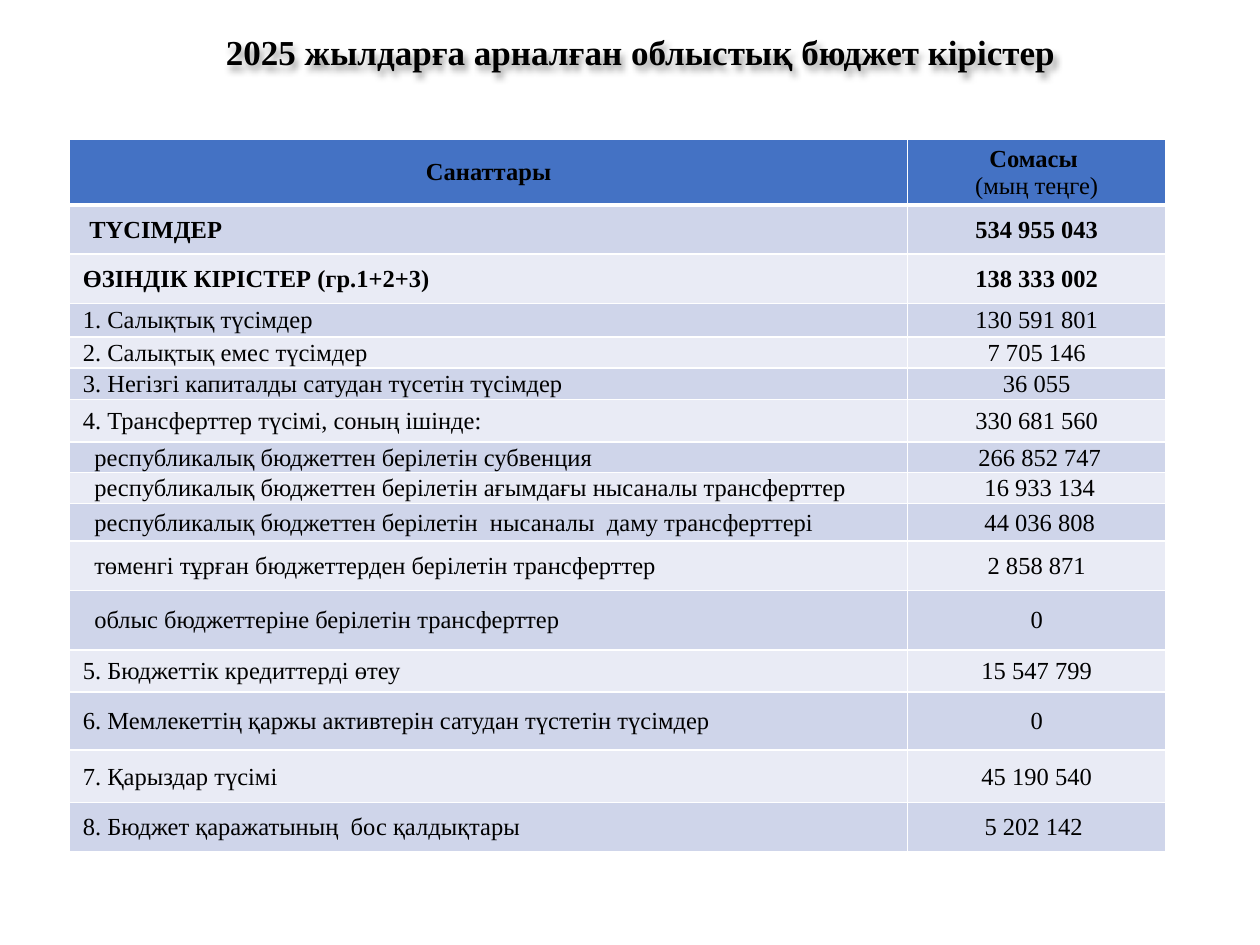
from dataclasses import dataclass

from lxml import etree
from pptx import Presentation
from pptx.dml.color import RGBColor
from pptx.enum import text as t
from pptx.oxml.ns import qn
from pptx.util import Cm, Pt


@dataclass(frozen=True)
class Theme:
    face: str = "Times New Roman"
    ink: str = "000000"
    head: str = "4472C4"
    bands: tuple = ("CFD5EA", "E9EBF5")
    rule: str = "FFFFFF"
    title: int = 20
    body: int = 14


THEME = Theme()
MID, LEFT = t.PP_ALIGN.CENTER, t.PP_ALIGN.LEFT
ITEM, TOTAL, SUB = 0.25, 0.38, 0.48  # left indents, cm

# label, amount, row height in cm, indent in cm, bold
ROWS = [
    ("ТҮСІМДЕР", "534 955 043", 0.99, TOTAL, True),
    ("ӨЗІНДІК КІРІСТЕР (гр.1+2+3)", "138 333 002", 1, ITEM, True),
    ("1. Салықтық түсімдер", "130 591 801", 0.67, ITEM, False),
    ("2. Салықтық емес түсімдер", "7 705 146", 0.63, ITEM, False),
    ("3. Негізгі капиталды сатудан түсетін түсімдер", "36 055", 0.63, ITEM, False),
    ("4. Трансферттер түсімі, соның ішінде:", "330 681 560", 0.86, ITEM, False),
    ("республикалық бюджеттен берілетін субвенция", " 266 852 747", 0.62, SUB, False),
    ("республикалық бюджеттен берілетін ағымдағы нысаналы трансферттер",
     " 16 933 134", 0.62, SUB, False),
    ("республикалық бюджеттен берілетін  нысаналы  даму трансферттері",
     " 44 036 808", 0.76, SUB, False),
    ("төменгі тұрған бюджеттерден берілетін трансферттер", "2 858 871", 0.99, SUB, False),
    ("облыс бюджеттеріне берілетін трансферттер", "0", 1.2, SUB, False),
    ("5. Бюджеттік кредиттерді өтеу", "15 547 799", 0.85, ITEM, False),
    ("6. Мемлекеттің қаржы активтерін сатудан түстетін түсімдер", "0", 1.17, ITEM, False),
    ("7. Қарыздар түсімі", "45 190 540", 1.06, ITEM, False),
    ("8. Бюджет қаражатының  бос қалдықтары", "5 202 142 ", 0.99, ITEM, False),
]


def assign(obj, **vals):
    for key, val in vals.items():
        setattr(obj, key, val)


def node(up, tag, **attrs):
    return etree.SubElement(up, qn(tag), {k: str(v) for k, v in attrs.items()})


def write(para, words, size, bold, align):
    para.alignment = align
    run = para.add_run()
    run.text = words
    assign(run.font, name=THEME.face, size=Pt(size), bold=bold)
    run.font.color.rgb = RGBColor.from_string(THEME.ink)


def add_shade(shape):
    """Soft shadow, cast by the text of an unfilled shape."""
    fx = node(shape._element.spPr, "a:effectLst")
    cast = node(fx, "a:outerShdw", blurRad=Pt(4), dist=Pt(3), dir=3600000,
                algn="tl", rotWithShape=0)
    tint = node(cast, "a:srgbClr", val=THEME.ink)
    node(tint, "a:alpha", val=40000)


def add_title(slide, words):
    box = slide.shapes.title
    assign(box, left=Cm(0.43), top=Cm(0.48), width=Cm(24.03), height=Cm(1.12))
    frame = box.text_frame
    assign(frame, word_wrap=True, auto_size=t.MSO_AUTO_SIZE.SHAPE_TO_FIT_TEXT,
           vertical_anchor=t.MSO_ANCHOR.MIDDLE)
    para = frame.paragraphs[0]
    write(para, words, THEME.title, True, MID)
    para._p.get_or_add_pPr().set("indent", str(Cm(0.94)))
    add_shade(box)


def add_rules(cell, base):
    """Border all four sides; base is the width of the bottom one."""
    props = cell._tc.get_or_add_tcPr()
    for spot, (side, wide) in enumerate(zip("LRTB", (1, 1, 1, base))):
        line = node(props, f"a:ln{side}", w=Pt(wide))
        node(node(line, "a:solidFill"), "a:srgbClr", val=THEME.rule)
        props.insert(spot, line)


def fill_cell(cell, lines, fill, align=MID, indent=0, base=1):
    """Put (words, bold) lines into a cell, one paragraph each."""
    assign(cell, vertical_anchor=t.MSO_ANCHOR.MIDDLE, margin_left=Cm(0.02),
           margin_right=Cm(0.02), margin_top=Cm(0.02), margin_bottom=0)
    cell.fill.solid()
    cell.fill.fore_color.rgb = RGBColor.from_string(fill)
    frame = cell.text_frame
    for i, (words, bold) in enumerate(lines):
        para = frame.add_paragraph() if i else frame.paragraphs[0]
        write(para, words, THEME.body, bold, align)
        if indent:
            para._p.get_or_add_pPr().set("marL", str(Cm(indent)))
    add_rules(cell, base)


def add_grid(slide):
    highs = [1.33] + [row[2] for row in ROWS]
    wides = (16.9, 5.2)
    grid = slide.shapes.add_table(len(highs), len(wides), Cm(1.4), Cm(2.8),
                                  Cm(sum(wides)), Cm(sum(highs))).table
    for col, wide in zip(grid.columns, wides):
        col.width = Cm(wide)
    for row, high in zip(grid.rows, highs):
        row.height = Cm(high)
    heads = ([("Санаттары", True)], [("Сомасы ", True), ("(мың теңге)", False)])
    for i, lines in enumerate(heads):
        fill_cell(grid.cell(0, i), lines, THEME.head, base=3)
    for i, (label, sum_, _, indent, bold) in enumerate(ROWS):
        band = THEME.bands[i % 2]
        fill_cell(grid.cell(i + 1, 0), [(label, bold)], band, LEFT, indent)
        fill_cell(grid.cell(i + 1, 1), [(sum_, bold)], band)


def main():
    deck = Presentation()
    assign(deck, slide_width=Cm(25.4), slide_height=Cm(19.05))
    slide = deck.slides.add_slide(deck.slide_layouts[5])
    add_title(slide, "2025 жылдарға арналған облыстық бюджет кірістер")
    add_grid(slide)
    deck.save("out.pptx")


if __name__ == "__main__":
    main()
